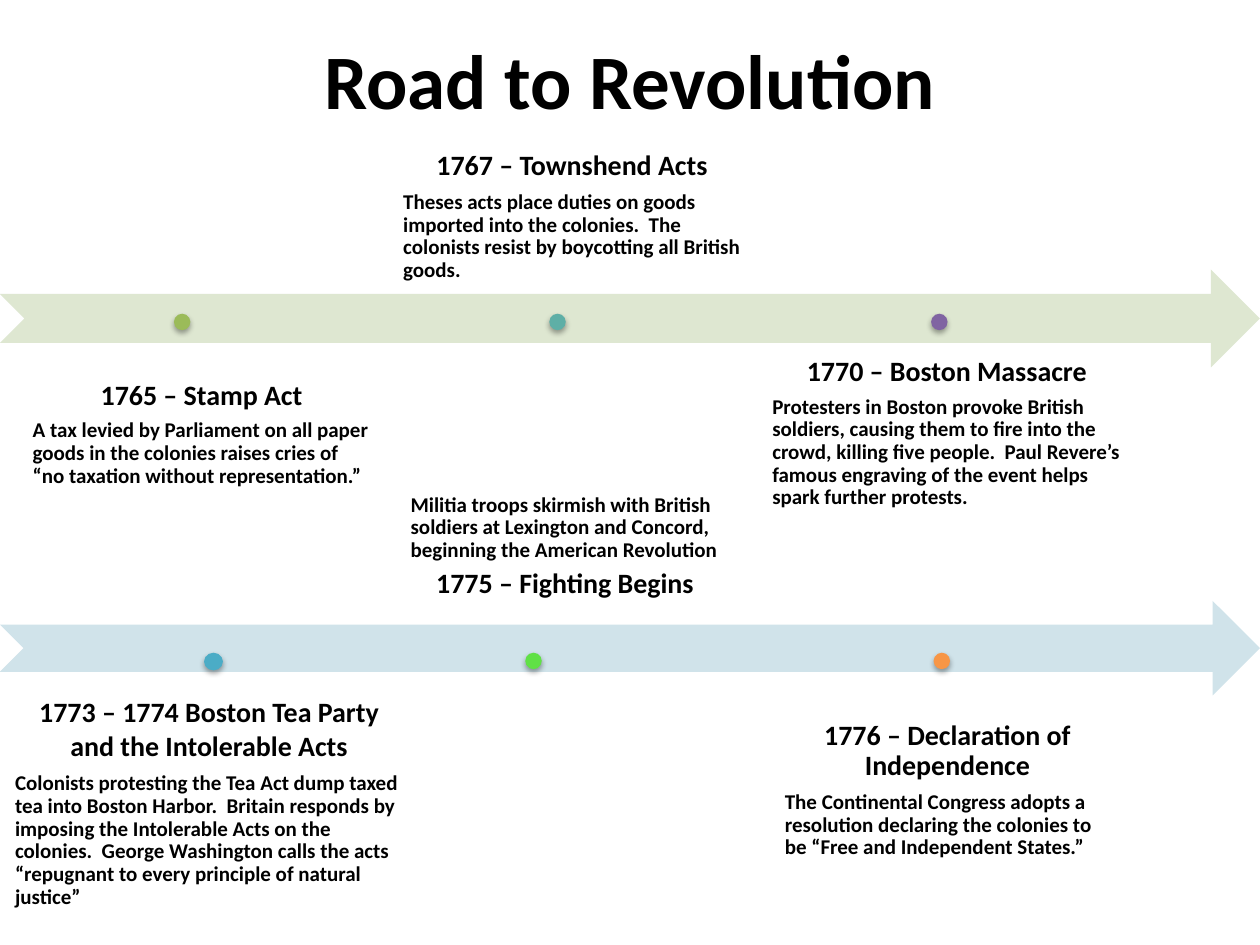
from dataclasses import dataclass

from lxml import etree
from pptx import Presentation
from pptx.dml.color import RGBColor
from pptx.enum import shapes, text
from pptx.oxml import ns
from pptx.util import Pt


@dataclass(frozen=True)
class Theme:
    font: str = "Calibri"
    ink: str = "000000"
    title: int = 44
    heading: int = 16
    body: int = 12
    line: float = 0.9
    after: float = 0.35  # space after, as a share of the type size


class Timeline:
    """Holds the theme, the current slide and the current group of shapes."""

    def __init__(self, slide, theme):
        self.slide, self.theme, self.group = slide, theme, None

    def style(self, p, size, align):
        p.alignment = align
        p.font.name, p.font.size, p.font.bold = self.theme.font, Pt(size), True
        p.font.color.rgb = RGBColor.from_string(self.theme.ink)

    def title(self, words, *box):
        sp = self.slide.shapes.title
        sp.left, sp.top, sp.width, sp.height = map(Pt, box)
        tf = sp.text_frame
        tf.text, tf.vertical_anchor = words, text.MSO_ANCHOR.MIDDLE
        self.style(tf.paragraphs[0], self.theme.title, text.PP_ALIGN.CENTER)

    def shape(self, kind, box, color):
        sp = self.group.shapes.add_shape(kind, *map(Pt, box))
        sp.shadow.inherit = False
        sp.fill.solid()
        sp.fill.fore_color.rgb = RGBColor.from_string(color)
        sp.line.fill.background()
        return sp

    def arrow(self, top, height, color):
        self.group = self.slide.shapes.add_group_shape()
        self.shape(shapes.MSO_SHAPE.NOTCHED_RIGHT_ARROW, (0, top, 720, height), color)

    def dot(self, left, top, color, width=9.4, height=9.4):
        sp = self.shape(shapes.MSO_SHAPE.OVAL, (left, top, width, height), color)
        effects = sp._element.spPr.find(ns.qn("a:effectLst"))
        shadow = etree.SubElement(effects, ns.qn("a:outerShdw"), blurRad=str(Pt(3.1)),
                                  dist=str(Pt(1.8)), dir="5400000", rotWithShape="0")
        black = etree.SubElement(shadow, ns.qn("a:srgbClr"), val="000000")
        etree.SubElement(black, ns.qn("a:alpha"), val="35000")

    def event(self, box, heading, body, anchor=text.MSO_ANCHOR.BOTTOM,
              gap=None, inset=8.6, heading_last=False):
        """A heading and its body; a gap replaces the heading's usual spacing."""
        th = self.theme
        tf = self.group.shapes.add_textbox(*map(Pt, box)).text_frame
        tf.word_wrap, tf.vertical_anchor = True, anchor
        tf.margin_left = tf.margin_right = tf.margin_top = tf.margin_bottom = Pt(inset)
        rows = [(heading, th.heading, text.PP_ALIGN.CENTER, gap),
                (body, th.body, text.PP_ALIGN.LEFT, None)]
        if heading_last:
            rows.reverse()
        for i, (words, size, align, space) in enumerate(rows):
            p = tf.add_paragraph() if i else tf.paragraphs[0]
            p.text = words
            self.style(p, size, align)
            if space is None:
                p.line_spacing = th.line
                space = round(size * th.after, 1)
            p.space_after = Pt(space)


def main():
    prs = Presentation()
    prs.slide_width, prs.slide_height = Pt(720), Pt(540)
    t = Timeline(prs.slides.add_slide(prs.slide_layouts[5]), Theme())
    top = text.MSO_ANCHOR.TOP

    t.title("Road to Revolution", 36, 0, 648, 90)

    # Upper road: 1765 to 1770
    t.arrow(154, 56, "DEE7D1")
    t.event((10.1, 198.7, 210.2, 88.6), "1765 – Stamp Act",
            "A tax levied by Parliament on all paper goods in the colonies raises "
            "cries of “no taxation without representation.”", gap=5)
    t.event((221.8, 77.8, 210.2, 88.6), "1767 – Townshend Acts",
            "Theses acts place duties on goods imported into the colonies.  The "
            "colonists resist by boycotting all British goods.", anchor=top)
    t.event((432.7, 211, 216.7, 88.6), "1770 – Boston Massacre",
            "Protesters in Boston provoke British soldiers, causing them to fire into "
            "the crowd, killing five people.  Paul Revere’s famous engraving of the "
            "event helps spark further protests.", gap=5)
    for left, color in ((99.4, "9BBB59"), (313.9, "5EAFA6"), (532.1, "8064A2")):
        t.dot(left, 179.3, color)

    # Lower road: 1773 to 1776
    t.arrow(343.4, 54, "D0E3EA")
    t.event((0, 373, 239, 154.8), "1773 – 1774 Boston Tea Party and the Intolerable Acts",
            "Colonists protesting the Tea Act dump taxed tea into Boston Harbor.  "
            "Britain responds by imposing the Intolerable Acts on the colonies.  George "
            "Washington calls the acts “repugnant to every principle of natural justice”",
            gap=6)
    t.event((228.2, 275.8, 189.4, 59), "1775 – Fighting Begins",
            "Militia troops skirmish with British soldiers at Lexington and Concord, "
            "beginning the American Revolution", anchor=top, inset=6.5, heading_last=True)
    t.event((439.9, 398.9, 203, 100.8), "1776 – Declaration of Independence",
            "The Continental Congress adopts a resolution declaring the colonies to be "
            "“Free and Independent States.”")
    t.dot(116.6, 373, "4BACC6", 10.8, 10.1)
    for left, color in ((300.2, "60E146"), (533.5, "F79646")):
        t.dot(left, 373, color)

    prs.save("out.pptx")


if __name__ == "__main__":
    main()
